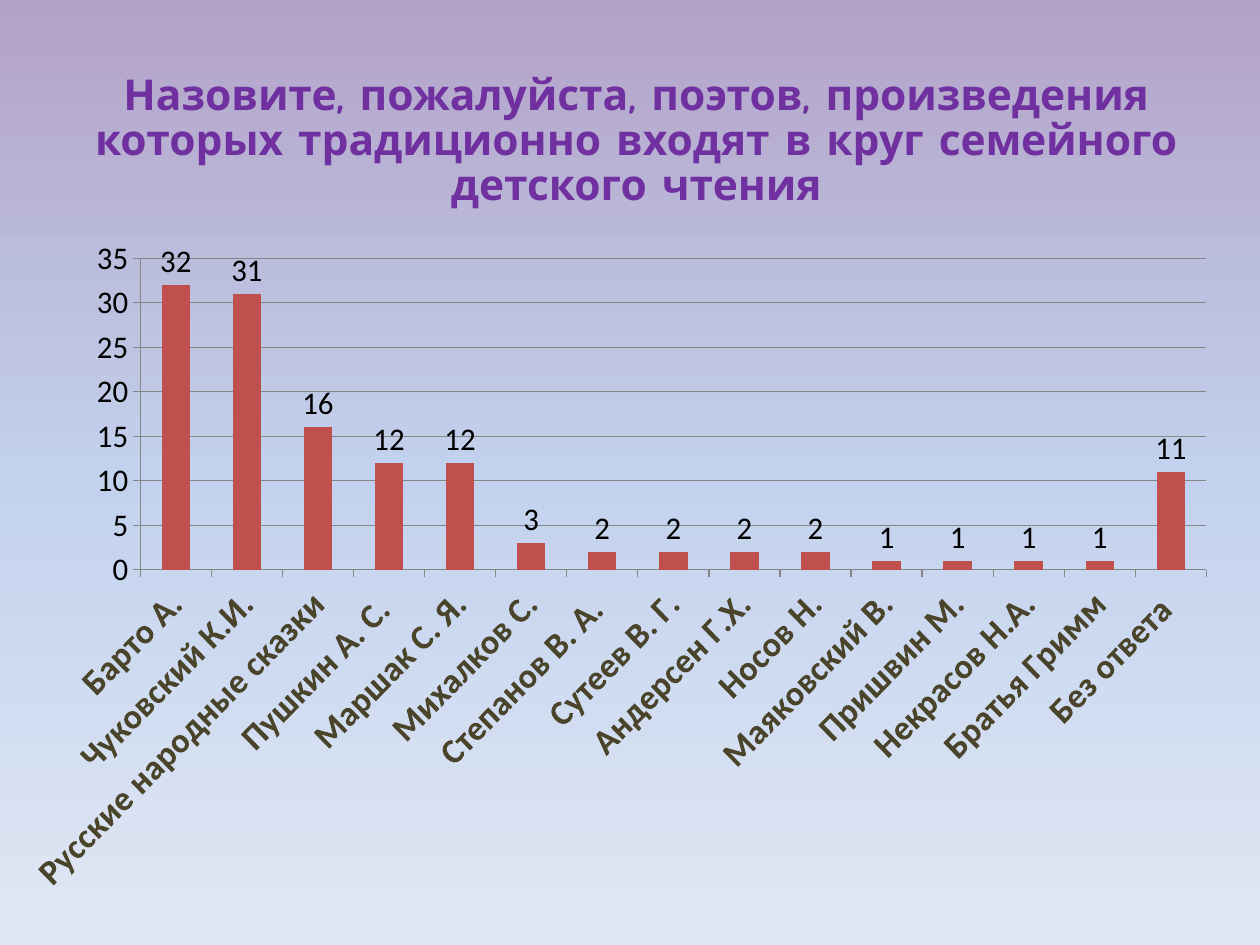
from copy import deepcopy
from dataclasses import dataclass

from lxml import etree
from pptx import Presentation
from pptx.chart.data import CategoryChartData
from pptx.dml.color import RGBColor
from pptx.enum import chart as ch, text as tx
from pptx.oxml import ns
from pptx.util import Cm, Pt


@dataclass(frozen=True)
class Theme:
    title: str = "7030A0"
    bar: str = "C0504D"
    ink: str = "000000"
    label: str = "4A452A"
    line: str = "868686"
    sky: tuple = ((0, "B3A2C7"), (0.5, "C2D1ED"), (1, "E1E8F5"))
    head: str = "Comic Neue"
    body: str = "Calibri"
    big: float = 24.3
    mid: float = 20
    small: float = 18


LOOK = Theme()
TITLE = ("Назовите, пожалуйста, поэтов, произведения которых "
         "традиционно входят в круг семейного детского чтения")
VOTES = {
    "Барто А.": 32,
    "Чуковский К.И.": 31,
    "Русские народные сказки": 16,
    "Пушкин А. С. ": 12,
    "Маршак С. Я.": 12,
    "Михалков С.": 3,
    "Степанов В. А. ": 2,
    "Сутеев В. Г.": 2,
    "Андерсен Г.Х.": 2,
    "Носов Н.": 2,
    "Маяковский В.": 1,
    "Пришвин М.": 1,
    "Некрасов Н.А.": 1,
    "Братья Гримм": 1,
    "Без ответа ": 11,
}


def rgb(code):
    return RGBColor.from_string(code)


def style(font, size, color, name, bold=False):
    font.size = Pt(size)
    font.color.rgb = rgb(color)
    font.name = name
    font.bold = bold


def paint(slide, stops):
    fill = slide.background.fill
    fill.gradient()
    fill.gradient_angle = 270
    group = slide.element.find(".//" + ns.qn("a:gsLst"))
    group.insert(1, deepcopy(group[0]))
    for stop, (place, color) in zip(fill.gradient_stops, stops):
        stop.position = place
        stop.color.rgb = rgb(color)


def write(slide, words, box, align=tx.PP_ALIGN.CENTER, space=0.88, **form):
    frame = slide.shapes.add_textbox(*map(Cm, box)).text_frame
    frame.word_wrap = True
    frame.vertical_anchor = tx.MSO_ANCHOR.MIDDLE
    para = frame.paragraphs[0]
    para.alignment = align
    para.line_spacing = space
    run = para.add_run()
    run.text = words
    style(run.font, **form)


def place(chart, x, y, w, h):
    area = chart.element.find(".//" + ns.qn("c:plotArea"))
    for old in area.findall(ns.qn("c:layout")):
        area.remove(old)
    layout = etree.Element(ns.qn("c:layout"))
    manual = etree.SubElement(layout, ns.qn("c:manualLayout"))
    rules = dict(layoutTarget="inner", xMode="edge", yMode="edge",
                 x=x, y=y, w=w, h=h)
    for name, val in rules.items():
        etree.SubElement(manual, ns.qn("c:" + name)).set("val", str(val))
    area.insert(0, layout)


def rule(line):
    line.color.rgb = rgb(LOOK.line)
    line.width = Pt(0.75)


def bars(slide, votes, box):
    data = CategoryChartData()
    data.categories = list(votes)
    data.add_series("Series 1", list(votes.values()))
    kind = ch.XL_CHART_TYPE.COLUMN_CLUSTERED
    chart = slide.shapes.add_chart(kind, *map(Cm, box), data).chart
    chart.has_legend = chart.has_title = False
    style(chart.font, LOOK.small, LOOK.ink, LOOK.body)
    place(chart, 0.073, 0.054, 0.916, 0.448)

    plot = chart.plots[0]
    plot.vary_by_categories = False
    plot.gap_width = 150
    fill = plot.series[0].format.fill
    fill.solid()
    fill.fore_color.rgb = rgb(LOOK.bar)
    plot.has_data_labels = True
    plot.data_labels.show_value = True
    plot.data_labels.position = ch.XL_LABEL_POSITION.OUTSIDE_END
    style(plot.data_labels.font, LOOK.small, LOOK.ink, LOOK.body)

    names, scale = chart.category_axis, chart.value_axis
    for axis in (names, scale):
        axis.major_tick_mark = ch.XL_TICK_MARK.OUTSIDE
        axis.minor_tick_mark = ch.XL_TICK_MARK.NONE
        rule(axis.format.line)
    scale.minimum_scale, scale.maximum_scale, scale.major_unit = 0, 35, 5
    scale.has_major_gridlines = True
    rule(scale.major_gridlines.format.line)
    style(scale.tick_labels.font, LOOK.small, LOOK.ink, LOOK.body)
    style(names.tick_labels.font, LOOK.mid, LOOK.label, LOOK.body, True)
    turn = chart.element.find(".//" + ns.qn("c:catAx")).find(
        ns.qn("c:txPr")).find(ns.qn("a:bodyPr"))
    turn.set("rot", "-2700000")


def main():
    deck = Presentation()
    deck.slide_width, deck.slide_height = Cm(25.4), Cm(19.05)
    slide = deck.slides.add_slide(deck.slide_layouts[6])
    paint(slide, LOOK.sky)
    write(slide, TITLE, (1.4, 1.27, 22.86, 3.18), size=LOOK.big,
          color=LOOK.title, name=LOOK.head, bold=True)
    bars(slide, VOTES, (0.58, 4.45, 24, 14.02))
    deck.save("out.pptx")


if __name__ == "__main__":
    main()
